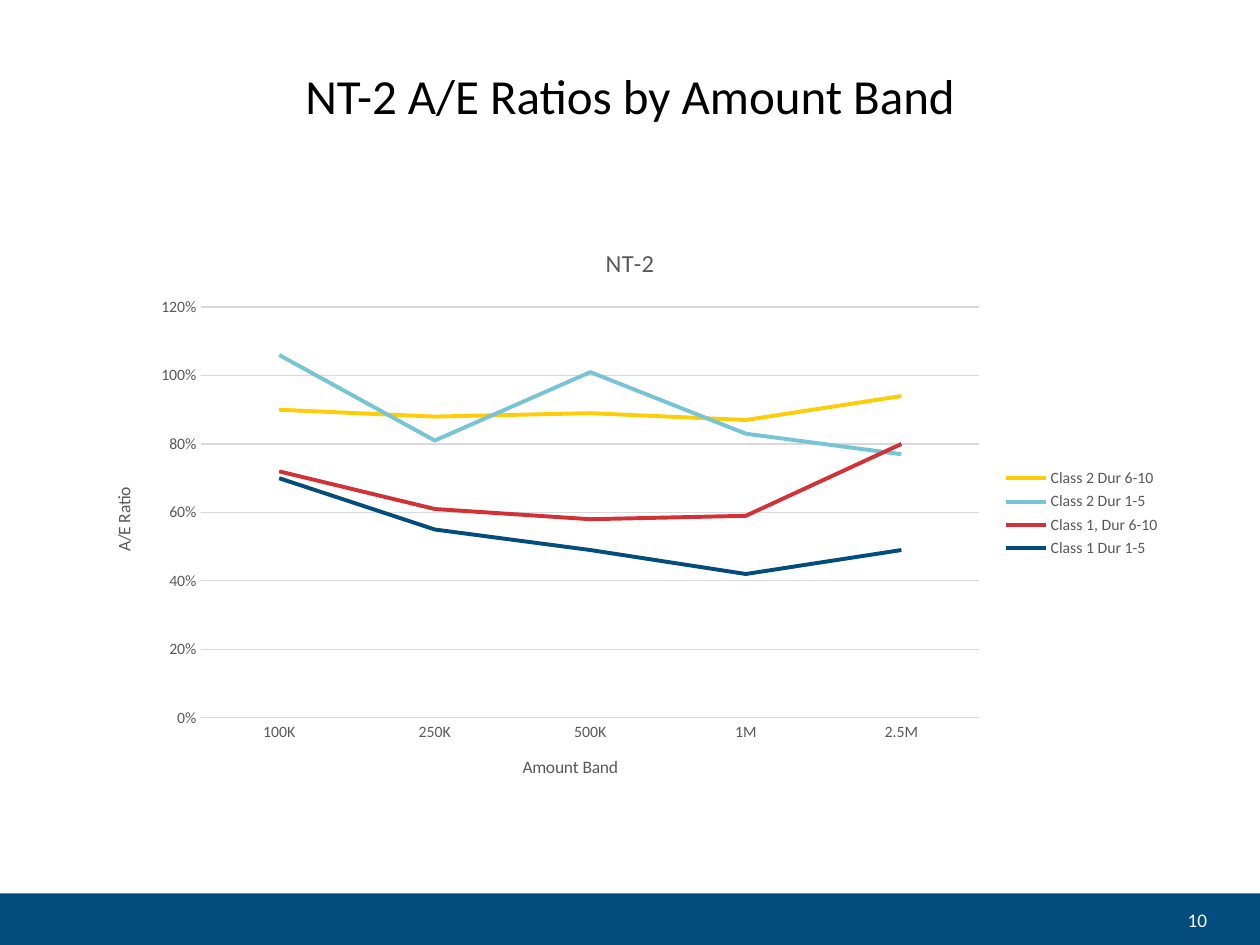
from pptx import Presentation
from pptx.chart.data import CategoryChartData
from pptx.dml.color import RGBColor
from pptx.enum.chart import XL_CHART_TYPE, XL_LEGEND_POSITION, XL_MARKER_STYLE, XL_TICK_MARK
from pptx.enum.shapes import MSO_SHAPE
from pptx.enum.text import MSO_ANCHOR, PP_ALIGN
from pptx.util import Inches, Pt

LINE_CHART = XL_CHART_TYPE.LINE
LEGEND_RIGHT = XL_LEGEND_POSITION.RIGHT
NO_MARKER = XL_MARKER_STYLE.NONE
NO_TICK = XL_TICK_MARK.NONE
RECTANGLE = MSO_SHAPE.RECTANGLE
MIDDLE = MSO_ANCHOR.MIDDLE
CENTER, RIGHT = PP_ALIGN.CENTER, PP_ALIGN.RIGHT

HEADING = "NT-2 A/E Ratios by Amount Band"
PAGE_NUMBER = "10"
CHART_TITLE = "NT-2"
BAND_TITLE = "Amount Band"
RATIO_TITLE = "A/E Ratio"
AMOUNT_BANDS = ["100K", "250K", "500K", "1M", "2.5M"]
RATIOS = [
    ("Class 2 Dur 6-10", "yellow", (0.90, 0.88, 0.89, 0.87, 0.94)),
    ("Class 2 Dur 1-5", "sky", (1.06, 0.81, 1.01, 0.83, 0.77)),
    ("Class 1, Dur 6-10", "red", (0.72, 0.61, 0.58, 0.59, 0.80)),
    ("Class 1 Dur 1-5", "navy", (0.70, 0.55, 0.49, 0.42, 0.49)),
]

THEME = {
    "font": "Calibri",
    "colors": {
        "black": "000000", "white": "FFFFFF", "gray": "595959", "grid": "D9D9D9",
        "yellow": "FDCE07", "sky": "77C4D5", "red": "D23138", "navy": "024D7C",
    },
    "sizes": {"heading": 28, "chart_title": 14, "page_number": 11, "axis_title": 10, "label": 9},
    "lines": {"series": 2.25, "grid": 0.75},
}


def color(name):
    return RGBColor.from_string(THEME["colors"][name])


def style_font(font, size, color_name):
    font.name = THEME["font"]
    font.size = Pt(THEME["sizes"][size])
    font.bold = False
    font.color.rgb = color(color_name)


def style_line(line, width, color_name):
    line.width = Pt(THEME["lines"][width])
    line.color.rgb = color(color_name)


def add_text(page, text, place, size, color_name, align):
    box = page.shapes.add_textbox(*map(Inches, place))
    frame = box.text_frame
    frame.word_wrap = True
    frame.vertical_anchor = MIDDLE
    frame.text = text
    para = frame.paragraphs[0]
    para.alignment = align
    style_font(para.runs[0].font, size, color_name)
    return para


def set_title(owner, text, size):
    """Title a chart or an axis."""
    frame = owner.text_frame
    frame.text = text
    style_font(frame.paragraphs[0].runs[0].font, size, "gray")


def add_ratio_chart(page, place):
    data = CategoryChartData(number_format="0%")
    data.categories = AMOUNT_BANDS
    for name, _, values in RATIOS:
        data.add_series(name, values)
    chart = page.shapes.add_chart(LINE_CHART, *map(Inches, place), data).chart
    style_font(chart.font, "label", "gray")

    chart.has_title = True
    set_title(chart.chart_title, CHART_TITLE, "chart_title")
    chart.chart_title.include_in_layout = False
    chart.has_legend = True
    chart.legend.position = LEGEND_RIGHT
    chart.legend.include_in_layout = False
    style_font(chart.legend.font, "label", "gray")

    bands, ratios = chart.category_axis, chart.value_axis
    for axis, title in ((bands, BAND_TITLE), (ratios, RATIO_TITLE)):
        set_title(axis.axis_title, title, "axis_title")
        axis.major_tick_mark = axis.minor_tick_mark = NO_TICK
        style_font(axis.tick_labels.font, "label", "gray")
    style_line(bands.format.line, "grid", "grid")
    ratios.minimum_scale, ratios.maximum_scale, ratios.major_unit = 0, 1.2, 0.2
    ratios.tick_labels.number_format = "0%"
    ratios.tick_labels.number_format_is_linked = False
    ratios.format.line.fill.background()
    style_line(ratios.major_gridlines.format.line, "grid", "grid")

    plot = chart.plots[0]
    plot.vary_by_categories = False
    for series, (_, color_name, _) in zip(plot.series, RATIOS):
        series.smooth = False
        series.marker.style = NO_MARKER
        style_line(series.format.line, "series", color_name)


def main():
    deck = Presentation()
    deck.slide_width, deck.slide_height = Inches(10), Inches(7.5)
    page = deck.slides.add_slide(deck.slide_layouts[6])

    footer = page.shapes.add_shape(RECTANGLE, *map(Inches, (0, 7.09, 10, 0.41)))
    footer.shadow.inherit = False
    footer.fill.solid()
    footer.fill.fore_color.rgb = color("navy")
    footer.line.fill.background()

    heading = add_text(page, HEADING, (0.69, 0.36, 8.62, 0.85), "heading", "black", CENTER)
    heading.line_spacing = 0.9
    add_ratio_chart(page, (0.69, 1.77, 8.62, 4.61))
    add_text(page, PAGE_NUMBER, (9.01, 7.1, 0.67, 0.4), "page_number", "white", RIGHT)
    deck.save("out.pptx")


if __name__ == "__main__":
    main()
